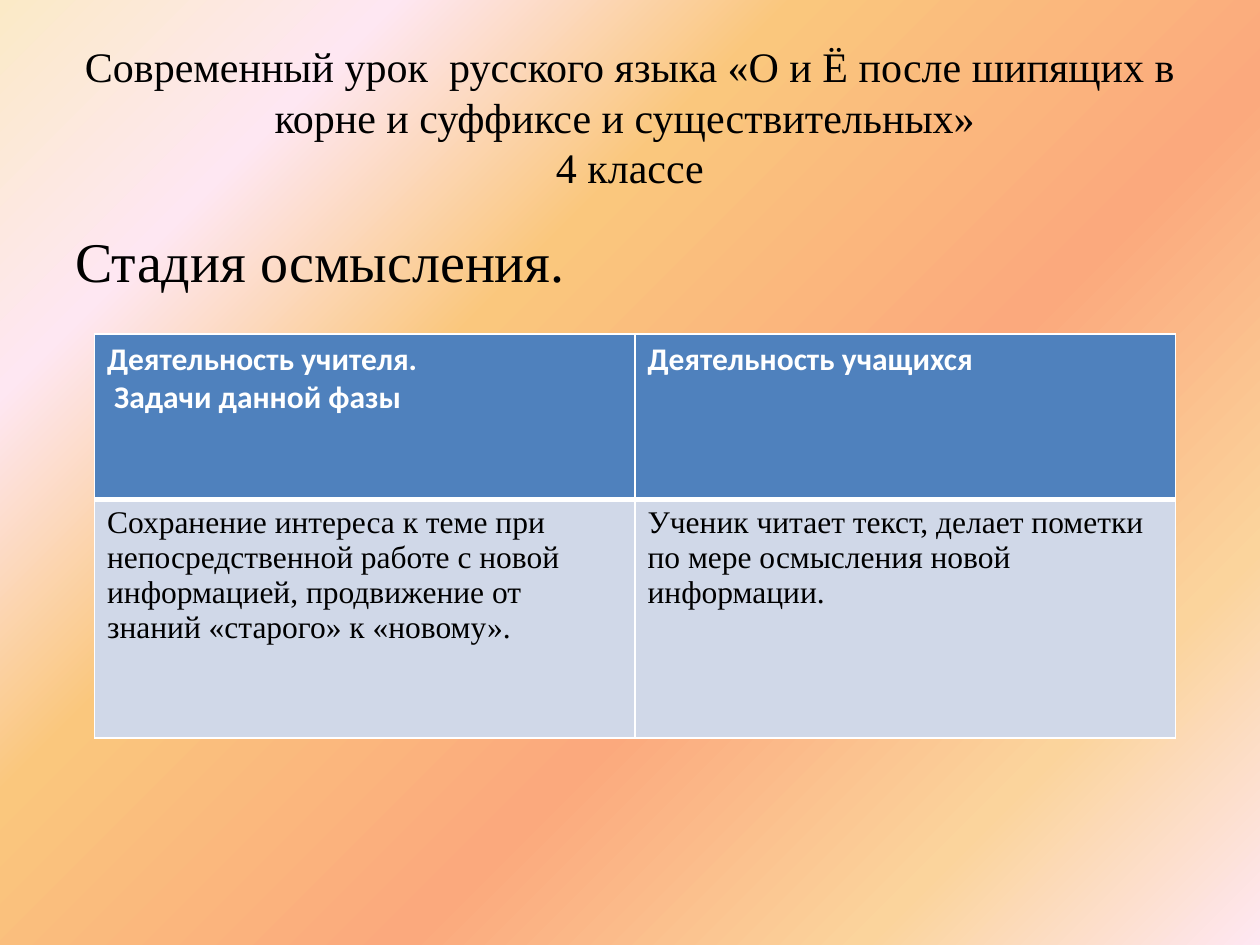
import pptx
import pptx.dml.color
import pptx.enum.text
import pptx.oxml
import pptx.oxml.ns
import pptx.util
from lxml import etree

Pt = pptx.util.Pt
RGB = pptx.dml.color.RGBColor.from_string
qn = pptx.oxml.ns.qn
SERIF, SANS = "Times New Roman", "Calibri"
COLORS = {"text": "000000", "white": "FFFFFF", "header": "4F81BD", "body": "D0D8E8",
          "cream": "FBEAC7", "pink": "FEE7F2", "amber": "FAC77D",
          "coral": "FBA97D", "sand": "FBD49C"}


def add_run(p, text, size, font, color, bold=False):
    r = p.add_run()
    r.text = text
    r.font.size = Pt(size)
    r.font.name = font
    r.font.bold = bold
    r.font.color.rgb = RGB(COLORS[color])


def add_border(tc_pr, index, side, width):
    ln = etree.Element(qn("a:" + side), w=str(Pt(width)))
    fill = etree.SubElement(ln, qn("a:solidFill"))
    etree.SubElement(fill, qn("a:srgbClr"), val=COLORS["white"])
    tc_pr.insert(index, ln)


prs = pptx.Presentation()
prs.slide_width, prs.slide_height = Pt(720), Pt(540)
s = prs.slides.add_slide(prs.slide_layouts[6])

# Diagonal gradient background
fill = s.background.fill
fill.gradient()
grad = s.background._cSld.find(".//" + qn("a:gradFill"))
stops = grad.find(qn("a:gsLst"))
for gs in list(stops):
    stops.remove(gs)
for pos, color in [(0, "cream"), (18, "pink"), (36, "amber"),
                   (61, "coral"), (82, "sand"), (100, "pink")]:
    gs = etree.SubElement(stops, qn("a:gs"), pos=str(pos * 1000))
    etree.SubElement(gs, qn("a:srgbClr"), val=COLORS[color])
lin = grad.find(qn("a:lin"))
lin.set("ang", str(45 * 60000))
lin.set("scaled", "0")

# Title
tf = s.shapes.add_textbox(Pt(36), Pt(21.6), Pt(648), Pt(90)).text_frame
tf.word_wrap = True
tf.vertical_anchor = pptx.enum.text.MSO_ANCHOR.MIDDLE
p = tf.paragraphs[0]
p.alignment = pptx.enum.text.PP_ALIGN.CENTER
add_run(p, "Современный урок  русского языка «О и Ё после шипящих в корне "
           "и суффиксе и существительных» ", 24, SERIF, "text")
p.add_line_break()
add_run(p, "4 классе", 24, SERIF, "text")

# Stage heading
tf = s.shapes.add_textbox(Pt(36), Pt(126), Pt(648), Pt(356.4)).text_frame
tf.word_wrap = True
p = tf.paragraphs[0]
p.space_before = Pt(6)
add_run(p, "Стадия осмысления.", 32, SERIF, "text")

# Table: teacher and pupil activities
rows = [
    [["Деятельность учителя.", " Задачи данной фазы"], ["Деятельность учащихся"]],
    [["Сохранение интереса к теме при непосредственной работе с новой информацией, "
      "продвижение от знаний «старого» к «новому»."],
     ["Ученик читает текст, делает пометки по мере осмысления новой информации."]],
]
styles = [
    {"fill": "header", "font": SANS, "color": "white", "bold": True, "top": 1, "bottom": 3},
    {"fill": "body", "font": SERIF, "color": "text", "bold": False, "top": 3, "bottom": 1},
]
table = s.shapes.add_table(2, 2, Pt(54), Pt(190.8), Pt(617.8), Pt(231)).table
for row, height in zip(table.rows, (94.5, 136.5)):
    row.height = Pt(height)
for i, (row, style) in enumerate(zip(rows, styles)):
    for j, lines in enumerate(row):
        cell = table.cell(i, j)
        cell.fill.solid()
        cell.fill.fore_color.rgb = RGB(COLORS[style["fill"]])
        tf = cell.text_frame
        for n, line in enumerate(lines):
            p = tf.add_paragraph() if n else tf.paragraphs[0]
            add_run(p, line, 18, style["font"], style["color"], style["bold"])
        sides = [("lnL", 1), ("lnR", 1), ("lnT", style["top"]), ("lnB", style["bottom"])]
        for n, (side, width) in enumerate(sides):
            add_border(cell._tc.get_or_add_tcPr(), n, side, width)

prs.save("out.pptx")
